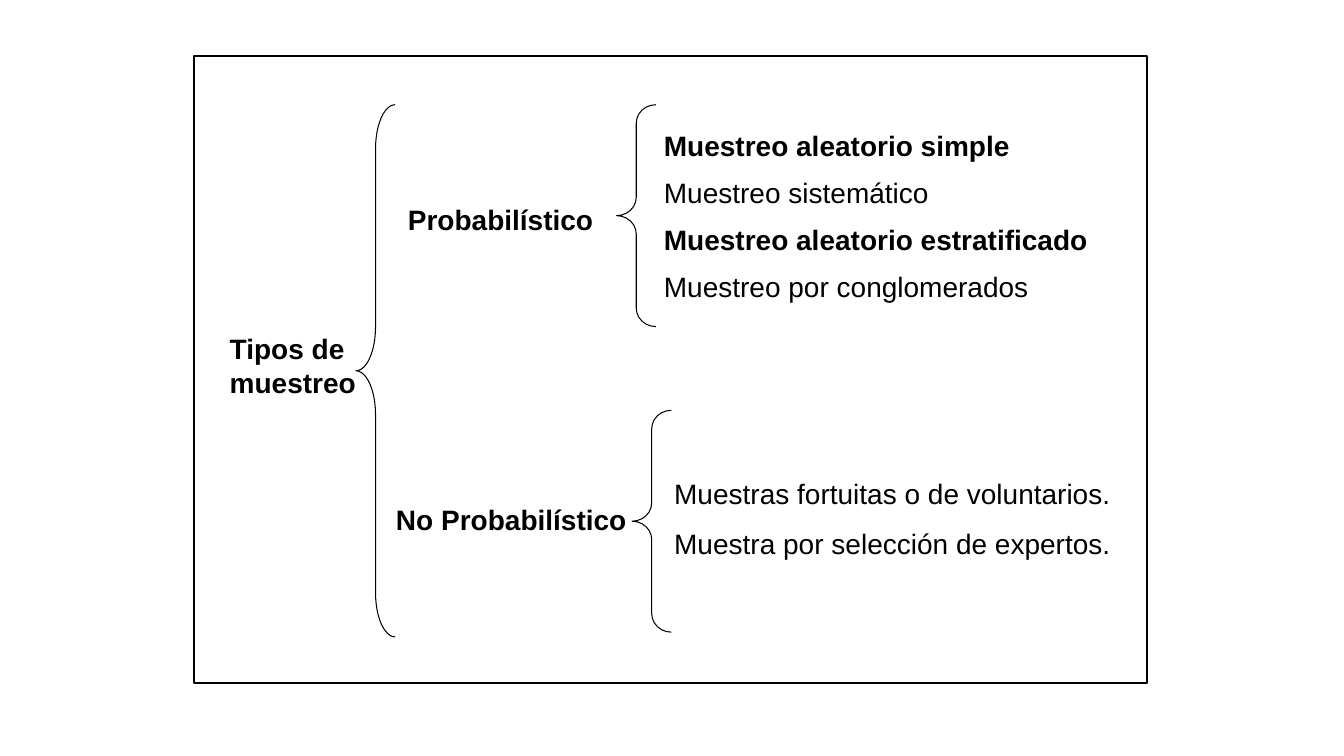
from pptx import Presentation
from pptx.dml.color import RGBColor
from pptx.enum.shapes import MSO_SHAPE
from pptx.enum.text import MSO_AUTO_SIZE, PP_ALIGN
from pptx.util import Cm, Pt

BLACK = "000000"
FONT = {"name": "Arial", "size": Pt(20)}
BRACE_WIDTH = 0.99


def color(value):
    return RGBColor.from_string(value)


def set_all(target, values):
    for name, value in values.items():
        setattr(target, name, value)


def add_outline(page, kind, left, top, width, height, weight):
    """Add an unfilled preset shape with a black line."""
    shape = page.shapes.add_shape(kind, Cm(left), Cm(top), Cm(width), Cm(height))
    shape.shadow.inherit = False
    shape.fill.background()
    shape.line.color.rgb = color(BLACK)
    shape.line.width = Pt(weight)
    return shape


def add_brace(page, left, top, height, curve):
    brace = add_outline(page, MSO_SHAPE.LEFT_BRACE, left, top, BRACE_WIDTH, height, 0.75)
    brace.adjustments[0] = curve
    brace.adjustments[1] = 0.5


def add_text(page, left, top, width, height, lines, spacing=1.0):
    """Add a text box from (text, bold) pairs, one paragraph each."""
    box = page.shapes.add_textbox(Cm(left), Cm(top), Cm(width), Cm(height))
    frame = box.text_frame
    set_all(frame, {"word_wrap": True, "auto_size": MSO_AUTO_SIZE.SHAPE_TO_FIT_TEXT})
    for index, (text, bold) in enumerate(lines):
        para = frame.add_paragraph() if index else frame.paragraphs[0]
        set_all(para, {"alignment": PP_ALIGN.LEFT, "line_spacing": spacing})
        span = para.add_run()
        span.text = text
        set_all(span.font, {**FONT, "bold": bold})
        span.font.color.rgb = color(BLACK)


def main():
    deck = Presentation()
    set_all(deck, {"slide_width": Cm(33.87), "slide_height": Cm(19.05)})
    page = deck.slides.add_slide(deck.slide_layouts[6])

    # Root of the scheme
    add_text(page, 5.54, 8.23, 4.65, 1.96, [("Tipos de muestreo", True)])
    add_brace(page, 8.97, 2.64, 13.41, 1.12)

    # Probability sampling
    add_text(page, 10.03, 4.98, 5.33, 1.12, [("Probabilístico", True)])
    add_brace(page, 15.54, 2.64, 5.59, 0.47)
    add_text(page, 16.48, 2.77, 12.14, 5.05, [
        ("Muestreo aleatorio simple", True),
        ("Muestreo sistemático", False),
        ("Muestreo aleatorio estratificado", True),
        ("Muestreo por conglomerados", False),
    ], 1.4)

    # Non-probability sampling
    add_text(page, 9.73, 12.55, 6.4, 1.09, [("No Probabilístico", True)])
    add_brace(page, 15.93, 10.34, 5.59, 0.47)
    add_text(page, 16.74, 11.46, 11.81, 2.79, [
        ("Muestras fortuitas o de voluntarios.", False),
        ("Muestra por selección de expertos.", False),
    ], 1.5)

    # Frame around the scheme
    add_outline(page, MSO_SHAPE.RECTANGLE, 4.9, 1.42, 24, 15.8, 1.5)

    deck.save("out.pptx")


if __name__ == "__main__":
    main()
